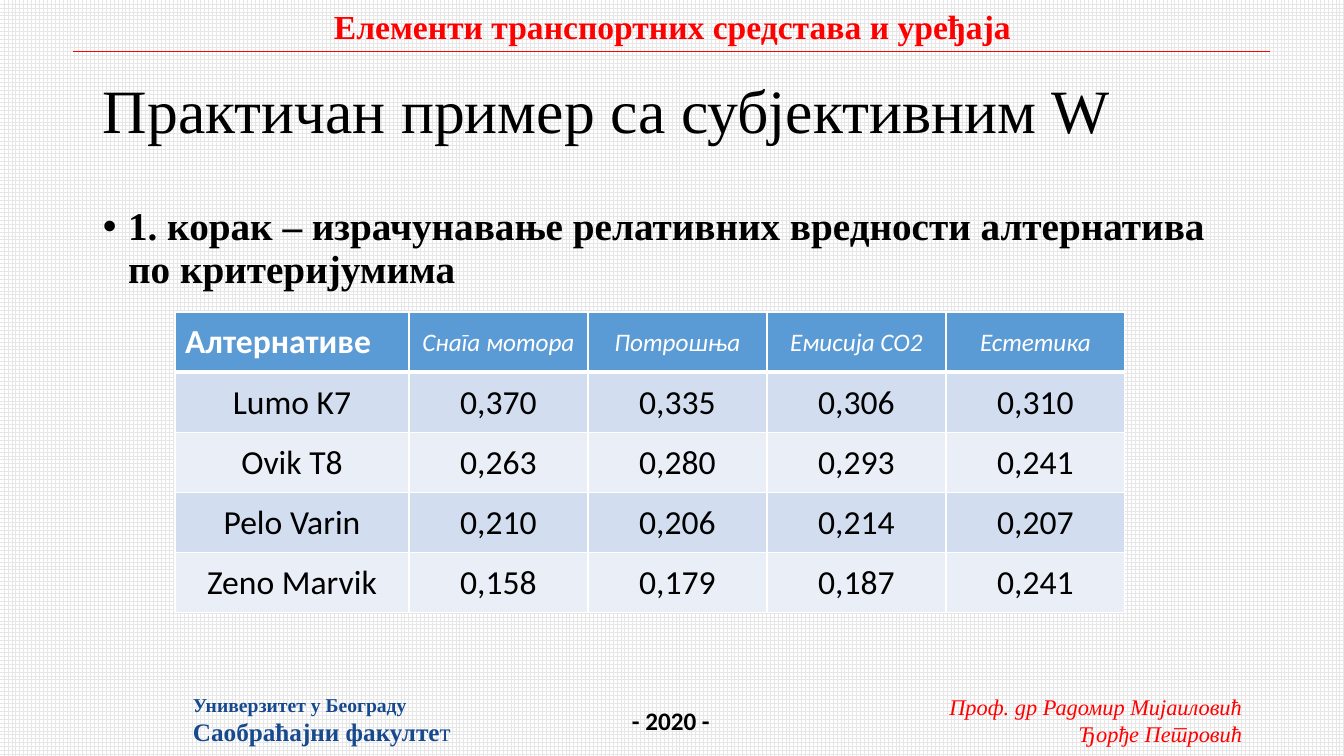
from lxml import etree
from pptx import Presentation
from pptx.dml.color import RGBColor
from pptx.enum.dml import MSO_PATTERN
from pptx.enum.lang import MSO_LANGUAGE_ID
from pptx.enum.shapes import MSO_CONNECTOR
from pptx.enum.text import MSO_ANCHOR, MSO_AUTO_SIZE, PP_ALIGN
from pptx.oxml.ns import qn
from pptx.util import Emu, Pt

LEFT, CENTER, RIGHT = PP_ALIGN.LEFT, PP_ALIGN.CENTER, PP_ALIGN.RIGHT
TOP, MIDDLE = MSO_ANCHOR.TOP, MSO_ANCHOR.MIDDLE
GROW = MSO_AUTO_SIZE.SHAPE_TO_FIT_TEXT
STRAIGHT = MSO_CONNECTOR.STRAIGHT
LARGE_GRID = MSO_PATTERN.LARGE_GRID
SERBIAN = MSO_LANGUAGE_ID.SERBIAN_CYRILLIC

BLACK = RGBColor(0x00, 0x00, 0x00)
WHITE = RGBColor(0xFF, 0xFF, 0xFF)
GRID_GRAY = RGBColor(0xE7, 0xE6, 0xE6)
RED = RGBColor(0xFF, 0x00, 0x00)
NAVY = RGBColor(0x16, 0x49, 0x8E)
HEAD_BLUE = RGBColor(0x5B, 0x9B, 0xD5)
BANDS = (RGBColor(0xD2, 0xDE, 0xEF), RGBColor(0xEA, 0xEF, 0xF7))
SERIF, SANS = "Times New Roman", "Calibri"

HEADINGS = ("Алтернативе", "Снага мотора", "Потрошња", "Емисија CO2", "Естетика")
ALTERNATIVES = (
    ("Lumo K7", "0,370", "0,335", "0,306", "0,310"),
    ("Ovik T8", "0,263", "0,280", "0,293", "0,241"),
    ("Pelo Varin", "0,210", "0,206", "0,214", "0,207"),
    ("Zeno Marvik", "0,158", "0,179", "0,187", "0,241"),
)


def px(n):
    """Turn slide pixels into EMU."""
    return Emu(round(n * 914400 / 100.8))


def write(p, text, size=18, font=SERIF, color=BLACK, bold=False, italic=False, align=LEFT):
    """Append a formatted run to a paragraph."""
    p.alignment = align
    r = p.add_run()
    r.text = text
    r.font.language_id = SERBIAN
    r.font.size = Pt(size)
    r.font.name = font
    r.font.color.rgb = color
    r.font.bold = bold
    r.font.italic = italic


def add_box(slide, box, wrap=False, anchor=TOP):
    """Add an empty text box and return its text frame."""
    tf = slide.shapes.add_textbox(*map(px, box)).text_frame
    tf.word_wrap = wrap
    tf.vertical_anchor = anchor
    if not wrap:
        tf.auto_size = GROW
    return tf


def add_header(slide, box):
    """Add the course name with the rule below it."""
    x, y, w, h = box
    tf = add_box(slide, (x + 247, y, 705, h))
    write(tf.paragraphs[0], "Елементи транспортних средстава и уређаја",
          size=24, color=RED, bold=True, align=CENTER)
    rule = slide.shapes.add_connector(STRAIGHT, px(x), px(y + h), px(x + w), px(y + h))
    rule.line.color.rgb = RED
    rule.line.width = Pt(0.5)
    etree.SubElement(rule._element.spPr, qn("a:effectLst"))


def add_footer(slide, box):
    """Add the faculty, the year and the authors along the bottom."""
    x, y, w, h = box
    tf = add_box(slide, (x, y, 281, h))
    write(tf.paragraphs[0], "Универзитет у Београду", size=14, color=NAVY, bold=True)
    p = tf.add_paragraph()
    write(p, "Саобраћајни факулте", color=NAVY, bold=True)
    write(p, "т", color=NAVY)

    tf = add_box(slide, (x + 439, y + 12, 99, 40))
    write(tf.paragraphs[0], "- 2020 -", font=SANS, bold=True)

    tf = add_box(slide, (x + w - 323, y, 323, h))
    style = dict(size=16, color=RED, italic=True, align=RIGHT)
    write(tf.paragraphs[0], "Проф. др Радомир Мијаиловић", **style)
    write(tf.add_paragraph(), "Ђорђе Петровић", **style)


def add_title(slide, box):
    """Add the slide title."""
    p = add_box(slide, box, wrap=True, anchor=MIDDLE).paragraphs[0]
    p.line_spacing = 0.9
    write(p, "Практичан пример са субјективним W", size=44)


def add_step(slide, box):
    """Add the bulleted step."""
    p = add_box(slide, box, wrap=True).paragraphs[0]
    p.line_spacing = 0.9
    pPr = p._p.get_or_add_pPr()
    pPr.set("marL", "228600")
    pPr.set("indent", "-228600")
    etree.SubElement(pPr, qn("a:buFont"), typeface="Arial")
    etree.SubElement(pPr, qn("a:buChar"), char="•")
    write(p, "1. корак – израчунавање релативних вредности алтернатива по критеријумима",
          size=28, bold=True)


def set_borders(cell, **widths):
    """Give a cell white borders, with widths in points by side."""
    tcPr = cell._tc.get_or_add_tcPr()
    for side in "LRTB":
        ln = etree.SubElement(tcPr, qn("a:ln" + side), w=str(Pt(widths.get(side, 1))))
        fill = etree.SubElement(ln, qn("a:solidFill"))
        etree.SubElement(fill, qn("a:srgbClr"), val=str(WHITE))


def fill_cell(cell, row, col, text):
    """Format one table cell by its row and column."""
    head, corner = row == 0, row == col == 0
    set_borders(cell, **({"B": 3} if head else {"T": 3} if row == 1 else {}))
    cell.fill.solid()
    cell.fill.fore_color.rgb = HEAD_BLUE if head else BANDS[(row - 1) % 2]
    cell.vertical_anchor = MIDDLE
    if not corner:
        cell.margin_left = cell.margin_right = cell.margin_top = px(1)
        cell.margin_bottom = 0
    write(cell.text_frame.paragraphs[0], text, font=SANS,
          size=18 if head and not corner else 24,
          color=WHITE if head else BLACK, bold=corner,
          italic=head and not corner, align=LEFT if corner else CENTER)


def add_values(slide, box):
    """Add the table of relative values."""
    rows = (HEADINGS, *ALTERNATIVES)
    first = 234
    table = slide.shapes.add_table(len(rows), len(HEADINGS), *map(px, box)).table
    for i, column in enumerate(table.columns):
        column.width = px((box[2] - first) / (len(HEADINGS) - 1) if i else first)
    for i, row in enumerate(rows):
        for j, text in enumerate(row):
            fill_cell(table.cell(i, j), i, j, text)


def main():
    """Build and save the slide."""
    prs = Presentation()
    prs.slide_width, prs.slide_height = px(1344), px(756)
    slide = prs.slides.add_slide(prs.slide_layouts[6])
    fill = slide.background.fill
    fill.patterned()
    fill.pattern = LARGE_GRID
    fill.fore_color.rgb = GRID_GRAY
    fill.back_color.rgb = WHITE
    add_header(slide, (73, 1, 1197, 50))
    add_footer(slide, (183, 688, 1069, 65))
    add_title(slide, (93, 41, 1159, 146))
    add_step(slide, (93, 202, 1159, 480))
    add_values(slide, (175, 312, 950, 301))
    prs.save("out.pptx")


if __name__ == "__main__":
    main()
